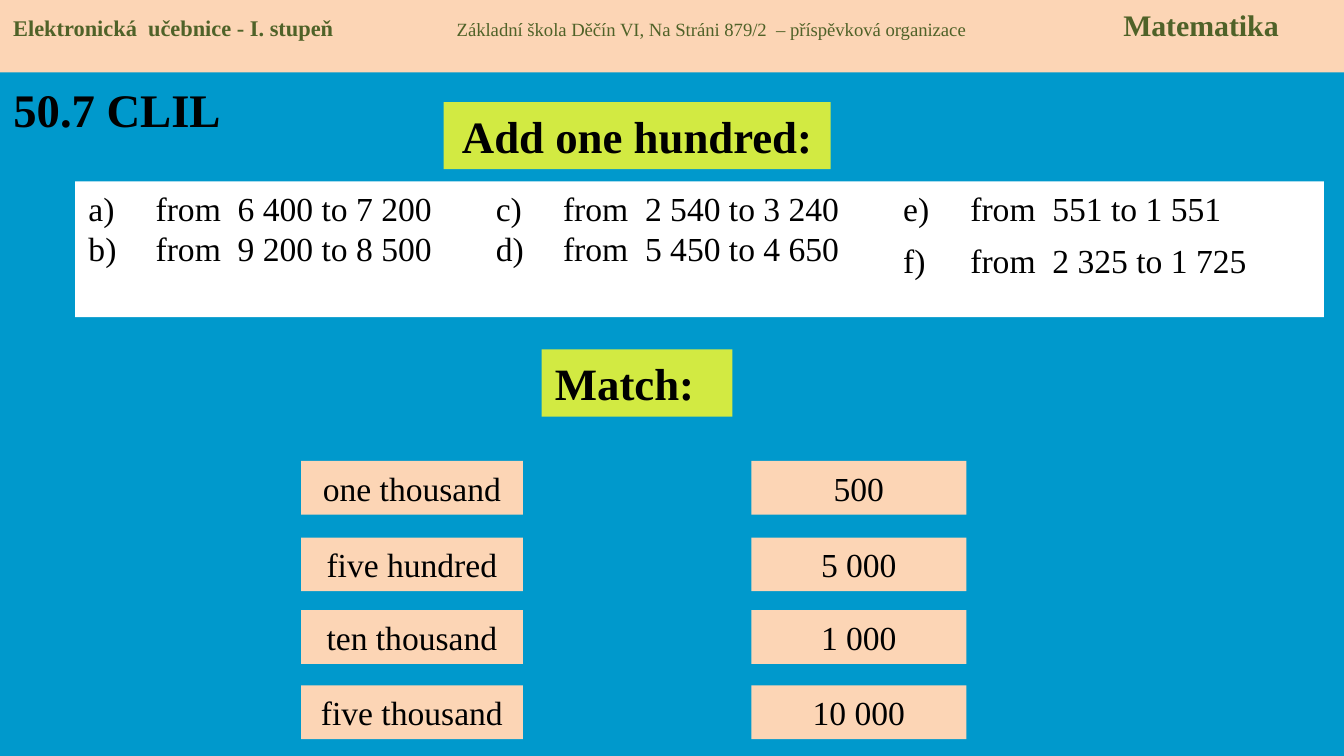
from lxml import etree
from pptx import Presentation
from pptx.dml.color import RGBColor
from pptx.enum.shapes import MSO_SHAPE
from pptx.enum.text import MSO_ANCHOR, PP_ALIGN
from pptx.oxml.ns import qn
from pptx.util import Inches, Pt

RECT = MSO_SHAPE.RECTANGLE
TOP, MIDDLE = MSO_ANCHOR.TOP, MSO_ANCHOR.MIDDLE
LEFT, CENTER = PP_ALIGN.LEFT, PP_ALIGN.CENTER

FONT = "Times New Roman"
BLUE, PEACH, LIME = "0099CC", "FCD5B5", "D2EA42"
WHITE, BLACK, GREEN = "FFFFFF", "000000", "4F6228"

HEADER = [
    ("Elektronická  učebnice - I. stupeň", 12, True),
    ("\tZákladní škola Děčín VI, Na Stráni 879/2  – příspěvková organizace", 10, False),
    ("\tMatematika", 16, True),
]
TASKS = [
    ("from  6 400 to 7 200", "from  9 200 to 8 500"),
    ("from  2 540 to 3 240", "from  5 450 to 4 650"),
    ("from  551 to 1 551", "from  2 325 to 1 725"),
]
PAIRS = [
    (3.43, "one thousand", "500"),
    (4, "five hundred", "5 000"),
    (4.54, "ten thousand", "1 000"),
    (5.1, "five thousand", "10 000"),
]


def paint(fill, color):
    """Fill solidly with a hex colour."""
    fill.solid()
    fill.fore_color.rgb = RGBColor.from_string(color)


def style_run(r, size, bold=False, color=BLACK):
    """Format one run."""
    r.font.name = FONT
    r.font.size = Pt(size)
    r.font.bold = bold
    r.font.color.rgb = RGBColor.from_string(color)


def style(p, size, bold=False):
    """Format all runs of a paragraph."""
    for r in p.runs:
        style_run(r, size, bold)


def add_tabs(p, stops):
    """Give a paragraph left tab stops in inches."""
    tabs = etree.SubElement(p._p.get_or_add_pPr(), qn("a:tabLst"))
    for pos in stops:
        etree.SubElement(tabs, qn("a:tab"), pos=str(Inches(pos)), algn="l")


def add_number(p):
    """Number a paragraph a), b), c) with a hanging indent."""
    pPr = p._p.get_or_add_pPr()
    pPr.set("marL", str(Inches(0.5)))
    pPr.set("indent", str(-Inches(0.5)))
    etree.SubElement(pPr, qn("a:buFont"), typeface="+mj-lt")
    etree.SubElement(pPr, qn("a:buAutoNum"), type="alphaLcParenR")


def add_box(s, box, color, text="", size=18, bold=False, align=CENTER):
    """Add a filled rectangle with one line of text."""
    sp = s.shapes.add_shape(RECT, *map(Inches, box))
    sp.shadow.inherit = False
    paint(sp.fill, color)
    sp.line.fill.background()
    tf = sp.text_frame
    tf.vertical_anchor = TOP
    tf.text = text
    p = tf.paragraphs[0]
    p.alignment = align
    style(p, size, bold)
    return sp


def add_header(s):
    """Add the header band with three tabbed texts."""
    sp = add_box(s, (0, 0, 10, 0.54), PEACH, align=LEFT)
    p = sp.text_frame.paragraphs[0]
    add_tabs(p, (3.3, 8.26))
    for text, size, bold in HEADER:
        r = p.add_run()
        r.text = text
        style_run(r, size, bold, GREEN)


def set_title(s, text):
    """Place and format the slide title."""
    sp = s.shapes.title
    sp.left, sp.top, sp.width, sp.height = map(Inches, (0, 0.55, 1.76, 0.52))
    tf = sp.text_frame
    tf.text = text
    tf.word_wrap = False
    tf.vertical_anchor = MIDDLE
    tf.paragraphs[0].alignment = LEFT
    style(tf.paragraphs[0], 25, True)


def add_tasks(s):
    """Add the numbered tasks, flowing through three text columns."""
    tf = add_box(s, (0.56, 1.35, 9.29, 1.01), WHITE).text_frame
    tf._txBody.bodyPr.set("numCol", str(len(TASKS)))
    for i, (first, last) in enumerate(TASKS):
        for text in (first, last):
            p = tf.add_paragraph() if i or text == last else tf.paragraphs[0]
            p.text = text
            p.alignment = LEFT
            if text == last:
                p.space_after = Pt(12 if i < len(TASKS) - 1 else 0)
                p.space_before = Pt(0 if i < len(TASKS) - 1 else 6)
            add_number(p)
            style(p, 18)


def main():
    """Build the slide."""
    prs = Presentation()
    prs.slide_width = Inches(10)
    prs.slide_height = prs.slide_width * 9 // 16
    s = prs.slides.add_slide(prs.slide_layouts[5])
    paint(s.background.fill, BLUE)
    set_title(s, "50.7 CLIL")
    add_header(s)
    add_box(s, (3.3, 0.76, 2.88, 0.5), LIME, "Add one hundred:", 24, True)
    add_tasks(s)
    add_box(s, (4.03, 2.6, 1.42, 0.5), LIME, "Match:", 24, True, LEFT)
    for top, word, number in PAIRS:
        add_box(s, (2.24, top, 1.65, 0.4), PEACH, word)
        add_box(s, (5.59, top, 1.6, 0.4), PEACH, number)
    prs.save("out.pptx")


if __name__ == "__main__":
    main()
